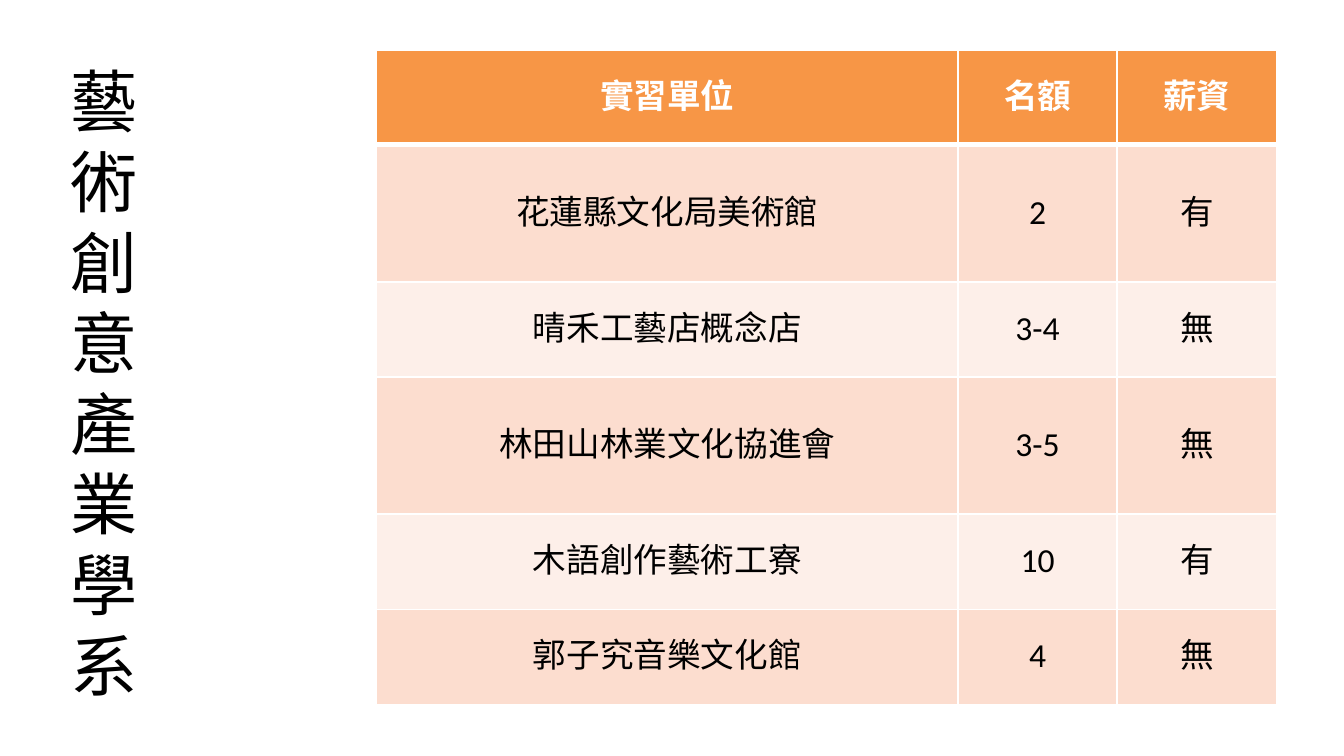
"""Build the internship table slide of the arts and creative industries department."""
from lxml import etree
from pptx import Presentation
from pptx import util as u
from pptx.dml.color import RGBColor
from pptx.enum import text
from pptx.oxml import ns

COLORS = {"header": "F79646", "odd": "FCDDCF", "even": "FDEFE9", "white": "FFFFFF", "black": "000000"}


def style_runs(paragraph, font_name, size, color, bold=False):
    for run in paragraph.runs:
        run.font.name = font_name
        run.font.size = u.Pt(size)
        run.font.bold = bold
        run.font.color.rgb = RGBColor.from_string(COLORS[color])
        etree.SubElement(run.font._element, ns.qn("a:ea"), typeface=font_name)


def add_borders(cell, widths):
    properties = cell._tc.get_or_add_tcPr()
    for position, (side, width) in enumerate(widths.items()):
        line = etree.Element(ns.qn(f"a:ln{side}"), w=str(u.Pt(width)))
        fill = etree.SubElement(line, ns.qn("a:solidFill"))
        etree.SubElement(fill, ns.qn("a:srgbClr"), val=COLORS["white"])
        properties.insert(position, line)


prs = Presentation()
prs.slide_width, prs.slide_height = u.Cm(25.4), u.Cm(14.29)
slide = prs.slides.add_slide(prs.slide_layouts[6])

department = slide.shapes.add_textbox(u.Cm(1.09), u.Cm(1.55), u.Cm(4.8), u.Cm(11.35)).text_frame
department.word_wrap = True
department.vertical_anchor = text.MSO_ANCHOR.MIDDLE
department.text = "\v".join("藝術創意產業學系")
style_runs(department.paragraphs[0], "TeX Gyre Bonum", 36, "black")

internships = [
    ("實習單位", "名額", "薪資"),
    ("花蓮縣文化局美術館", "2", "有"),
    ("晴禾工藝店概念店", "3-4", "無"),
    ("林田山林業文化協進會", "3-5", "無"),
    ("木語創作藝術工寮", "10", "有"),
    ("郭子究音樂文化館", "4", "無"),
]
column_widths = [11, 3, 3.02]
row_heights = [1.8, 2.59, 1.8, 2.59, 1.8, 1.8]
table = slide.shapes.add_table(
    len(internships), len(column_widths), u.Cm(7.11), u.Cm(0.94),
    u.Cm(sum(column_widths)), u.Cm(sum(row_heights))).table
for column, width in zip(table.columns, column_widths):
    column.width = u.Cm(width)

for r, (internship, height) in enumerate(zip(internships, row_heights)):
    table.rows[r].height = u.Cm(height)
    is_header = r == 0
    fill_color = "header" if is_header else "odd" if r % 2 else "even"
    for c, entry in enumerate(internship):
        cell = table.cell(r, c)
        cell.text_frame.text = entry
        cell.vertical_anchor = text.MSO_ANCHOR.MIDDLE
        cell.fill.solid()
        cell.fill.fore_color.rgb = RGBColor.from_string(COLORS[fill_color])
        add_borders(cell, {"L": 1, "R": 1, "T": 3 if r == 1 else 1, "B": 3 if is_header else 1})
        paragraph = cell.text_frame.paragraphs[0]
        paragraph.alignment = text.PP_ALIGN.CENTER
        style_runs(paragraph, "Calibri", 18, "white" if is_header else "black", is_header)
        if not is_header:
            paragraph.line_spacing = u.Pt(21)
            cell.margin_left = cell.margin_right = u.Cm(0.18)
            cell.margin_top = cell.margin_bottom = 0

prs.save("out.pptx")
